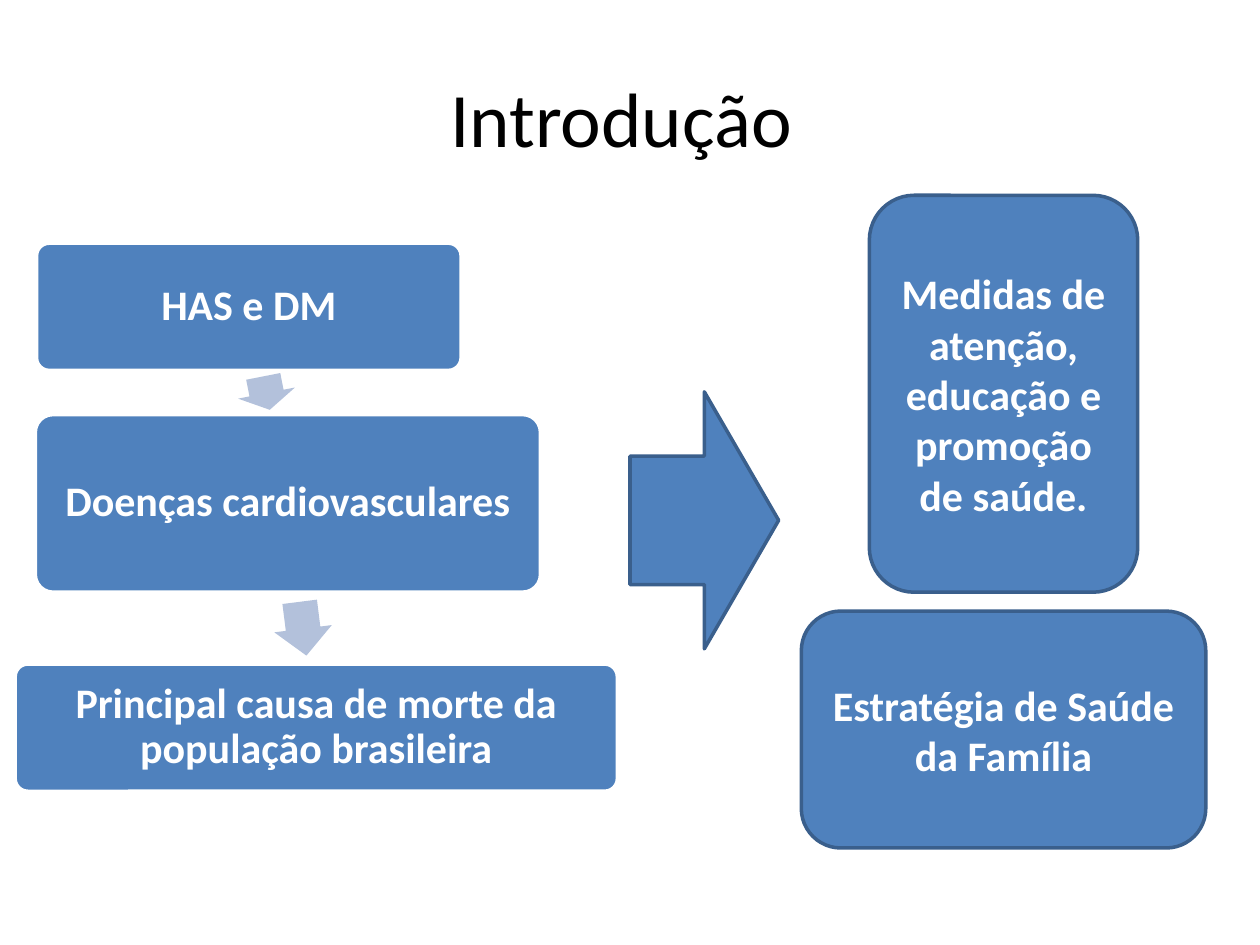
from dataclasses import dataclass
from typing import Optional

from pptx import Presentation
from pptx.dml.color import RGBColor
from pptx.enum.shapes import MSO_SHAPE
from pptx.enum.text import MSO_ANCHOR, PP_ALIGN
from pptx.util import Inches, Pt

ROUNDED = MSO_SHAPE.ROUNDED_RECTANGLE
ARROW = MSO_SHAPE.RIGHT_ARROW
CENTER = PP_ALIGN.CENTER
MIDDLE = MSO_ANCHOR.MIDDLE

BLUE = RGBColor(0x4F, 0x81, 0xBD)
NAVY = RGBColor(0x3A, 0x5F, 0x8C)
PALE = RGBColor(0xB3, 0xC1, 0xDB)
WHITE = RGBColor(0xFF, 0xFF, 0xFF)
BLACK = RGBColor(0x00, 0x00, 0x00)

FONT = "Calibri"
CELL = Inches(0.1)
COLS, ROWS = 100, 75


@dataclass(frozen=True)
class Area:
    col: float
    row: float
    cols: float
    rows: float

    def box(self) -> list[int]:
        return [round(n * CELL) for n in (self.col, self.row, self.cols, self.rows)]


@dataclass(frozen=True)
class Block:
    area: Area
    text: str = ""
    kind: int = ROUNDED
    fill: RGBColor = BLUE
    line: Optional[RGBColor] = NAVY
    adjust: tuple[float, ...] = ()
    rotation: float = 0
    inset: float = 1
    spacing: float = 1.0


def step(area: Area, text: str) -> Block:
    return Block(area, text, line=WHITE, adjust=(0.1,), inset=1.3, spacing=0.9)


def link(area: Area, rotation: float) -> Block:
    return Block(area, kind=ARROW, fill=PALE, line=None, adjust=(0.6, 0.5), rotation=rotation)


BLOCKS = [
    step(Area(2.9, 19.3, 33.7, 10.1), "HAS e DM"),
    link(Area(19.8, 28.9, 2.7, 4.6), 78.9),
    step(Area(2.8, 32.9, 40.1, 14.1), "Doenças cardiovasculares"),
    link(Area(21.9, 47.6, 4.3, 4.6), 82.8),
    step(Area(1.2, 52.7, 47.8, 10.1), "Principal causa de morte da população brasileira"),
    Block(Area(50, 31.1, 11.8, 20.4), kind=ARROW),
    Block(Area(69, 15.5, 21.3, 31.5), "Medidas de atenção, educação e promoção de saúde."),
    Block(Area(63.6, 48.5, 32.1, 18.8), "Estratégia de Saúde da Família"),
]


def write(tf, text: str, *, size: float = 24, color: RGBColor = WHITE,
          bold: bool = True, spacing: float = 1.0) -> None:
    tf.word_wrap = True
    tf.vertical_anchor = MIDDLE
    p = tf.paragraphs[0]
    p.alignment = CENTER
    p.line_spacing = spacing
    r = p.add_run()
    r.text = text
    r.font.name = FONT
    r.font.size = Pt(size)
    r.font.bold = bold
    r.font.color.rgb = color


def draw(s, block: Block) -> None:
    sp = s.shapes.add_shape(block.kind, *block.area.box())
    sp.shadow.inherit = False
    sp.rotation = block.rotation
    for i, value in enumerate(block.adjust):
        sp.adjustments[i] = value
    sp.fill.solid()
    sp.fill.fore_color.rgb = block.fill
    if block.line is None:
        sp.line.fill.background()
    else:
        sp.line.color.rgb = block.line
        sp.line.width = Pt(2)
    if block.text:
        tf = sp.text_frame
        tf.margin_left = tf.margin_right = round(block.inset * CELL)
        write(tf, block.text, spacing=block.spacing)


def main() -> None:
    prs = Presentation()
    prs.slide_width, prs.slide_height = COLS * CELL, ROWS * CELL
    s = prs.slides.add_slide(prs.slide_layouts[5])
    title = s.shapes.title
    title.left, title.top, title.width, title.height = Area(5, 3, 90, 12.5).box()
    write(title.text_frame, "Introdução ", size=44, color=BLACK, bold=False)
    for block in BLOCKS:
        draw(s, block)
    prs.save("out.pptx")


if __name__ == "__main__":
    main()
